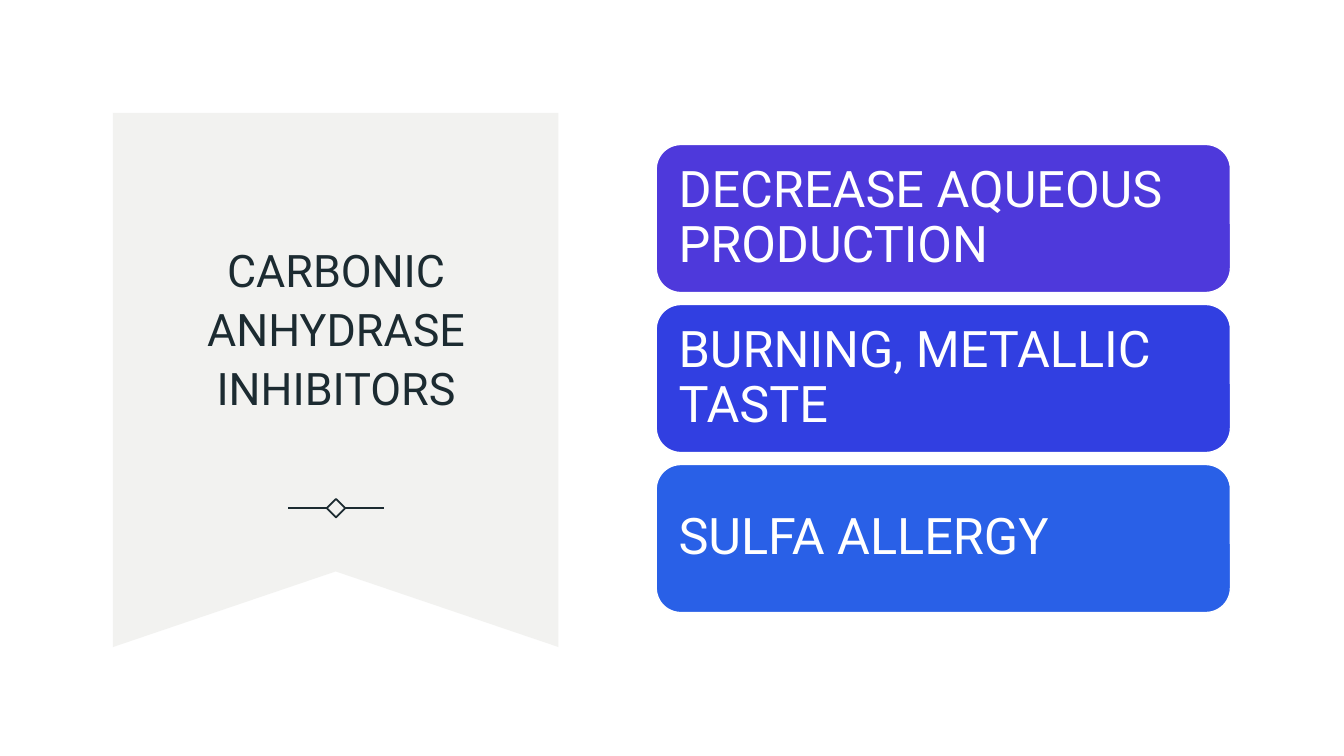
from lxml import etree
from pptx import Presentation
from pptx.dml.color import RGBColor
from pptx.enum.shapes import MSO_CONNECTOR as Connector, MSO_SHAPE as Shape
from pptx.enum.text import MSO_ANCHOR as Anchor, PP_ALIGN as Align
from pptx.oxml.ns import qn
from pptx.util import Pt

WHITE = RGBColor(0xFF, 0xFF, 0xFF)
PALE_GRAY = RGBColor(0xF2, 0xF2, 0xF0)
DARK = RGBColor(0x1C, 0x2B, 0x31)
VIOLET = RGBColor(0x4E, 0x39, 0xDB)
INDIGO = RGBColor(0x31, 0x3F, 0xE1)
BLUE = RGBColor(0x29, 0x60, 0xE7)


def write_text(shape, text, inset, alignment, line_spacing, font_format):
    frame = shape.text_frame
    frame_format = {
        "word_wrap": True,
        "vertical_anchor": Anchor.MIDDLE,
        "margin_left": inset,
        "margin_right": inset,
    }
    for name, value in frame_format.items():
        setattr(frame, name, value)
    paragraph = frame.paragraphs[0]
    paragraph.text = text
    paragraph.alignment = alignment
    paragraph.line_spacing = line_spacing
    for name, value in font_format.items():
        setattr(paragraph.font, name, value)


presentation = Presentation()
presentation.slide_width = Pt(960)
presentation.slide_height = Pt(540)
slide = presentation.slides.add_slide(presentation.slide_layouts[6])
shapes = slide.shapes

# Ribbon with a notched lower edge
outline = shapes.build_freeform(Pt(80.7), Pt(80.7))
ribbon_corners = [(398.9, 80.7), (398.9, 462.2), (239.8, 408.2), (80.7, 462.2)]
outline.add_line_segments([(Pt(x), Pt(y)) for x, y in ribbon_corners], close=True)
ribbon = outline.convert_to_shape()
ribbon.shadow.inherit = False
ribbon.fill.solid()
ribbon.fill.fore_color.rgb = PALE_GRAY
ribbon.line.fill.background()

# Title
title = shapes.add_textbox(Pt(112.3), Pt(130.3), Pt(255.6), Pt(205.2))
title_font = {"size": Pt(32), "name": "Roboto"}
write_text(title, "CARBONIC ANHYDRASE INHIBITORS", Pt(7.2), Align.CENTER, 1.1, title_font)
title.text_frame.paragraphs[0].font.color.rgb = DARK

# Diamond ornament with a line on either side
diamond = shapes.add_shape(Shape.DIAMOND, Pt(233.4), Pt(356.4), Pt(13.2), Pt(13.2))
diamond.shadow.inherit = False
diamond.fill.background()
diamond.line.color.rgb = DARK
diamond.line.width = Pt(1.25)
for outer_x, site in [(205.9, 1), (274.1, 3)]:
    rule = shapes.add_connector(Connector.STRAIGHT, Pt(outer_x), Pt(363), Pt(240), Pt(363))
    rule.end_connect(diamond, site)
    rule.line.color.rgb = DARK
    rule.line.width = Pt(1.25)
    etree.SubElement(rule.element.spPr, qn("a:effectLst"))

# Stacked cards
cards = [
    ("DECREASE AQUEOUS PRODUCTION", VIOLET),
    ("BURNING, METALLIC TASTE", INDIGO),
    ("SULFA ALLERGY", BLUE),
]
card_font = {"size": Pt(36), "name": "Roboto"}
for index, (text, color) in enumerate(cards):
    top = 103.2 + index * 114.3
    card = shapes.add_shape(Shape.ROUNDED_RECTANGLE, Pt(468.7), Pt(top), Pt(410.2), Pt(105.8))
    card.shadow.inherit = False
    card.fill.solid()
    card.fill.fore_color.rgb = color
    card.line.color.rgb = WHITE
    card.line.width = Pt(1)
    # A rounded rectangle already insets its text by about 5 pt
    write_text(card, text, Pt(10.8), Align.LEFT, 0.9, card_font)
    card.text_frame.paragraphs[0].font.color.rgb = WHITE

presentation.save("out.pptx")
